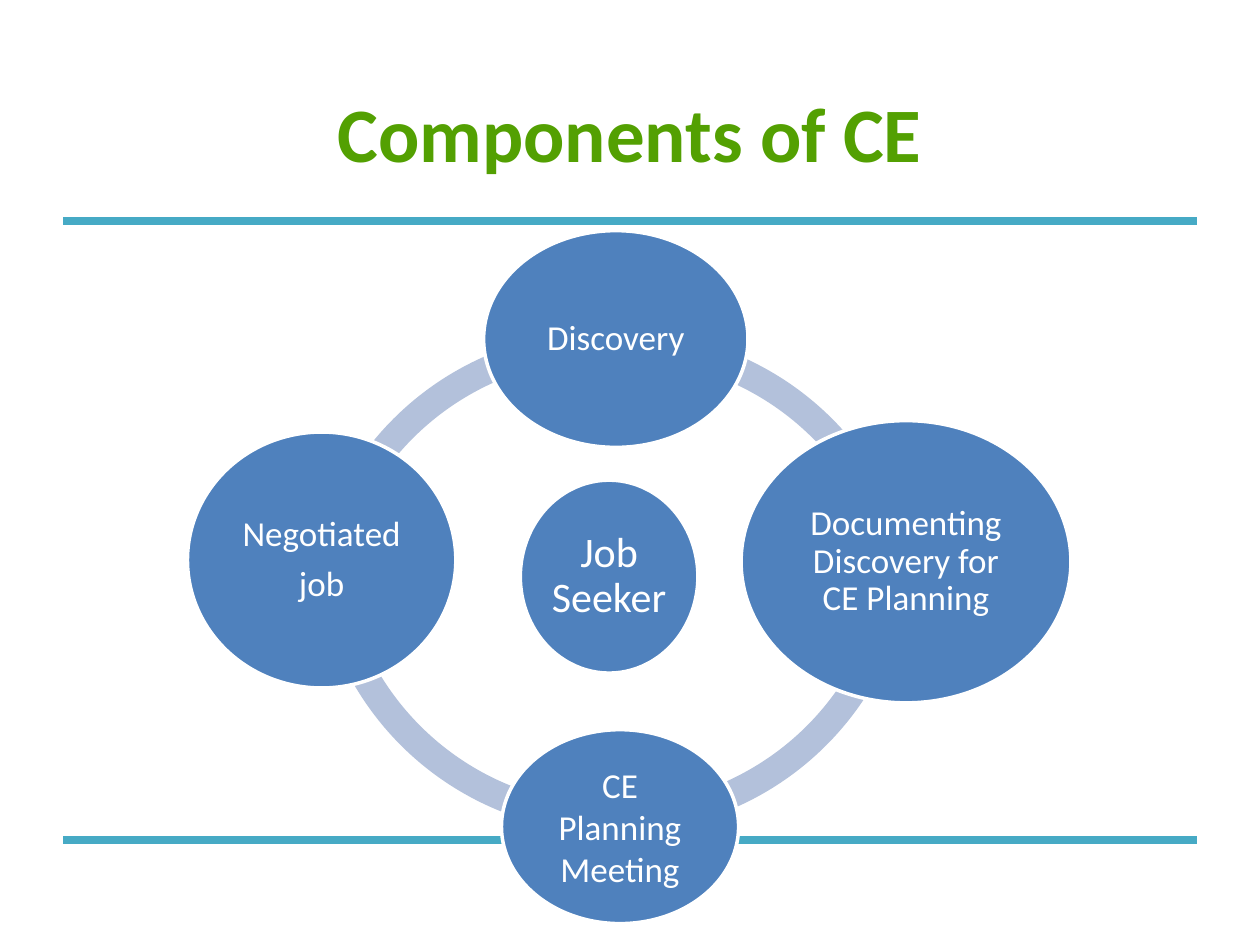
from lxml import etree
from pptx import Presentation
from pptx.dml.color import RGBColor
from pptx.enum.shapes import MSO_CONNECTOR, MSO_SHAPE
from pptx.enum.text import MSO_ANCHOR, PP_ALIGN
from pptx.oxml.ns import qn
from pptx.util import Cm, Pt


def rgb(value):
    return RGBColor.from_string(value)


def write(sp, lines, size, color, bold=False, spacing=None, after=None):
    """Fill a shape with centred Calibri paragraphs."""
    tf = sp.text_frame
    tf.word_wrap = True
    tf.vertical_anchor = MSO_ANCHOR.MIDDLE
    tf.text = "\n".join(lines)
    for i, p in enumerate(tf.paragraphs):
        p.alignment = PP_ALIGN.CENTER
        if spacing:
            p.line_spacing = spacing
        if after and i < len(lines) - 1:
            p.space_after = Pt(after)
        for r in p.runs:
            r.font.name = "Calibri"
            r.font.size = Pt(size)
            r.font.bold = bold
            r.font.color.rgb = rgb(color)


prs = Presentation()
prs.slide_width, prs.slide_height = Cm(25.4), Cm(19.05)
s = prs.slides.add_slide(prs.slide_layouts[6])

# Rules above and below the diagram
for y in (4.45, 16.94):
    line = s.shapes.add_connector(MSO_CONNECTOR.STRAIGHT, Cm(1.27), Cm(y), Cm(24.13), Cm(y))
    line.line.color.rgb = rgb("46AAC5")
    line.line.width = Pt(4.5)
    etree.SubElement(line._element.spPr, qn("a:effectLst"))

# Title
title = s.shapes.add_textbox(Cm(1.27), Cm(1.07), Cm(22.86), Cm(3.18))
write(title, ["Components of CE"], 44, "53A002", bold=True)

# Ring segments: left, top, start and end angle in degrees
ARCS = [
    (6.17, 6.68, 193.97, 272.26),
    (6.32, 4.75, 88.57, 174.96),
    (6.38, 4.75, 5.45, 89.05),
    (6.5, 6.68, 268.96, 346.41),
]
for x, y, start, end in ARCS:
    arc = s.shapes.add_shape(MSO_SHAPE.BLOCK_ARC, Cm(x), Cm(y), Cm(12.04), Cm(12.04))
    arc.shadow.inherit = False
    arc.fill.solid()
    arc.fill.fore_color.rgb = rgb("B3C1DB")
    arc.line.fill.background()
    # Adjustments count 100000ths, angles 60000ths of a degree
    arc.adjustments[0] = start * 0.6
    arc.adjustments[1] = end * 0.6
    arc.adjustments[2] = 0.046

# Circles: left, top, width, height, text, size, line spacing, space after
CIRCLES = [
    (10.49, 9.68, 3.58, 3.89, ["Job Seeker"], 24, 0.9, None),
    (9.75, 4.65, 5.33, 4.37, ["Discovery"], 20, 0.9, None),
    (14.94, 8.48, 6.65, 5.69, ["Documenting Discovery for CE Planning"], 20, 0.9, None),
    (10.11, 14.71, 4.78, 3.91, ["CE Planning", "Meeting"], 20, None, None),
    (3.78, 8.71, 5.41, 5.16, ["Negotiated", "job"], 20, 0.9, 7),
]
for x, y, w, h, lines, size, spacing, after in CIRCLES:
    sp = s.shapes.add_shape(MSO_SHAPE.OVAL, Cm(x), Cm(y), Cm(w), Cm(h))
    sp.shadow.inherit = False
    sp.fill.solid()
    sp.fill.fore_color.rgb = rgb("4F81BD")
    sp.line.color.rgb = rgb("FFFFFF")
    sp.line.width = Pt(2)
    tf = sp.text_frame
    tf.margin_left = tf.margin_right = tf.margin_top = tf.margin_bottom = Cm(0.08)
    write(sp, lines, size, "FFFFFF", spacing=spacing, after=after)

prs.save("out.pptx")
